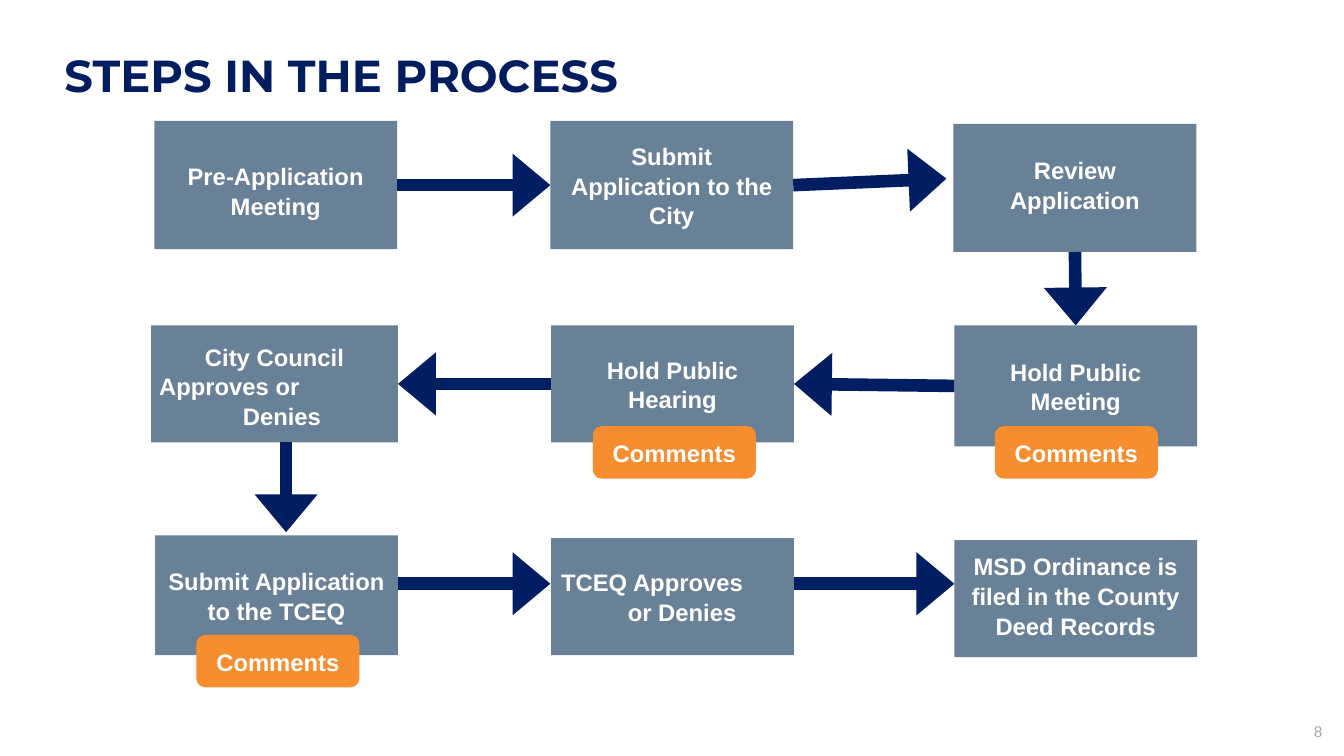
import pptx
import pptx.util
import pptx.dml.color
import pptx.enum.shapes
import pptx.enum.text
from lxml import etree
from pptx.oxml.ns import qn

Cm = pptx.util.Cm
Pt = pptx.util.Pt
ALIGN = pptx.enum.text.PP_ALIGN
ANCHOR = pptx.enum.text.MSO_ANCHOR
SHAPE = pptx.enum.shapes.MSO_SHAPE

NAVY, TITLE_NAVY, SLATE, ORANGE = "001E61", "001D5F", "688197", "F68D2E"
WHITE, GREY = "FFFFFF", "A6A6A6"
TOP, LEFT, BOTTOM, RIGHT = range(4)
STEP_WIDTH = 6.12
COMMENT_SIZE = (4.11, 1.32)
LABEL = {"name": "Arial", "size": Pt(17), "bold": True}

# key: (left, top, width, height), text lines, downward text shift, side inset
# a text line is (text, alignment, indent)
STEPS = {
    "meeting": ((3.89, 3.05, STEP_WIDTH, 3.23),
                [("Pre-Application Meeting", ALIGN.CENTER, 0)], 0.14, 0.48),
    "submit": ((13.87, 3.05, STEP_WIDTH, 3.23),
               [("Submit Application to the City", ALIGN.CENTER, 0)], 0, 0.48),
    "review": ((24.03, 3.12, STEP_WIDTH, 3.23),
               [("Review Application", ALIGN.CENTER, 0)], -0.08, 0.48),
    "public": ((24.05, 8.2, STEP_WIDTH, 3.05),
               [("Hold Public Meeting", ALIGN.CENTER, 0)], 0, 0.48),
    "hearing": ((13.89, 8.2, STEP_WIDTH, 2.95),
                [("Hold Public Hearing", ALIGN.CENTER, 0)], 0, 0.48),
    "council": ((3.81, 8.2, 6.22, 2.95),
                [("City Council", ALIGN.CENTER, 0),
                 ("Approves or", ALIGN.LEFT, 0),
                 ("Denies", ALIGN.CENTER, 0.37)], 0.05, 0.2),
    "tceq": ((3.91, 13.49, STEP_WIDTH, 3.02),
             [("Submit Application to the TCEQ", ALIGN.CENTER, 0)], 0, 0.25),
    "approval": ((13.89, 13.56, STEP_WIDTH, 2.95),
                 [("TCEQ Approves", ALIGN.LEFT, 0),
                  ("or Denies", ALIGN.CENTER, 0.48)], 0, 0.25),
    "records": ((24.05, 13.61, STEP_WIDTH, 2.95),
                [("MSD Ordinance is filed in the County Deed Records",
                  ALIGN.CENTER, 0)], -0.08, 0.25),
}

JOINED_ARROWS = [
    ("meeting", RIGHT, "submit", LEFT),
    ("review", BOTTOM, "public", TOP),
    ("public", LEFT, "hearing", RIGHT),
    ("hearing", LEFT, "council", RIGHT),
]
FREE_ARROWS = [
    (7.21, 11.15, 7.21, 13.41),
    (10.03, 14.71, 13.87, 14.71),
    (20.01, 14.71, 24.05, 14.71),
]
COMMENTS = [(4.95, 16.0), (14.94, 10.74), (25.07, 10.74)]


def rgb(value):
    return pptx.dml.color.RGBColor.from_string(value)


def apply(target, formats):
    for key, value in formats.items():
        setattr(target, key, value)


def write_line(paragraph, text, font, color, align=ALIGN.LEFT, indent=0):
    if indent:
        paragraph._p.get_or_add_pPr().set("marL", str(Cm(indent)))
    paragraph.alignment = align
    run = paragraph.add_run()
    run.text = text
    apply(run.font, font)
    run.font.color.rgb = rgb(color)


def add_box(slide, kind, bounds, fill, lines, shift=0, inset=0.25):
    box = slide.shapes.add_shape(kind, *map(Cm, bounds))
    box.shadow.inherit = False
    box.fill.solid()
    box.fill.fore_color.rgb = rgb(fill)
    box.line.fill.background()
    frame = box.text_frame
    apply(frame, {
        "word_wrap": True, "vertical_anchor": ANCHOR.MIDDLE,
        "margin_left": Cm(inset), "margin_right": Cm(inset),
        "margin_top": Cm(max(2 * shift, 0)),
        "margin_bottom": Cm(max(-2 * shift, 0)),
    })
    for index, (text, align, indent) in enumerate(lines):
        paragraph = frame.add_paragraph() if index else frame.paragraphs[0]
        write_line(paragraph, text, LABEL, WHITE, align, indent)
        paragraph.line_spacing = 1.04
    return box


def add_arrow(slide, ends):
    arrow = slide.shapes.add_connector(
        pptx.enum.shapes.MSO_CONNECTOR.STRAIGHT, *map(Cm, ends))
    arrow.line.color.rgb = rgb(NAVY)
    arrow.line.width = Pt(9)
    etree.SubElement(arrow.line._get_or_add_ln(), qn("a:tailEnd"),
                     type="triangle", w="lg", len="med")
    etree.SubElement(arrow._element.spPr, qn("a:effectLst"))
    return arrow


def format_title(slide):
    title = slide.shapes.title
    apply(title, {"left": Cm(1.37), "top": Cm(1.24),
                  "width": Cm(31.09), "height": Cm(1.96)})
    apply(title.text_frame, {
        "word_wrap": True, "vertical_anchor": ANCHOR.TOP,
        "auto_size": pptx.enum.text.MSO_AUTO_SIZE.NONE})
    paragraph = title.text_frame.paragraphs[0]
    write_line(paragraph, "STEPS IN THE PROCESS",
               {"name": "Montserrat", "size": Pt(32), "bold": True}, TITLE_NAVY)
    paragraph.line_spacing = 0.9


def add_page_number(slide):
    number = slide.shapes.add_textbox(Cm(23.37), Cm(18.06), Cm(10.21), Cm(0.74))
    number.text_frame.word_wrap = True
    write_line(number.text_frame.paragraphs[0], "8",
               {"name": "Arial", "size": Pt(11)}, GREY, ALIGN.RIGHT)


def main():
    deck = pptx.Presentation()
    deck.slide_width, deck.slide_height = Cm(33.87), Cm(19.05)
    slide = deck.slides.add_slide(deck.slide_layouts[5])
    format_title(slide)
    add_page_number(slide)

    # Process steps
    steps = {key: add_box(slide, SHAPE.RECTANGLE, bounds, SLATE, *content)
             for key, (bounds, *content) in STEPS.items()}

    # Arrows between the steps
    for start, start_side, end, end_side in JOINED_ARROWS:
        arrow = add_arrow(slide, (0, 0, 0, 0))
        arrow.begin_connect(steps[start], start_side)
        arrow.end_connect(steps[end], end_side)
    to_review = add_arrow(slide, (19.99, 4.66, 23.85, 4.5))
    to_review.begin_connect(steps["submit"], RIGHT)
    for ends in FREE_ARROWS:
        add_arrow(slide, ends)

    # Comment tags
    for place in COMMENTS:
        add_box(slide, SHAPE.ROUNDED_RECTANGLE, place + COMMENT_SIZE, ORANGE,
                [("Comments", ALIGN.CENTER, 0)])

    deck.save("out.pptx")


if __name__ == "__main__":
    main()
